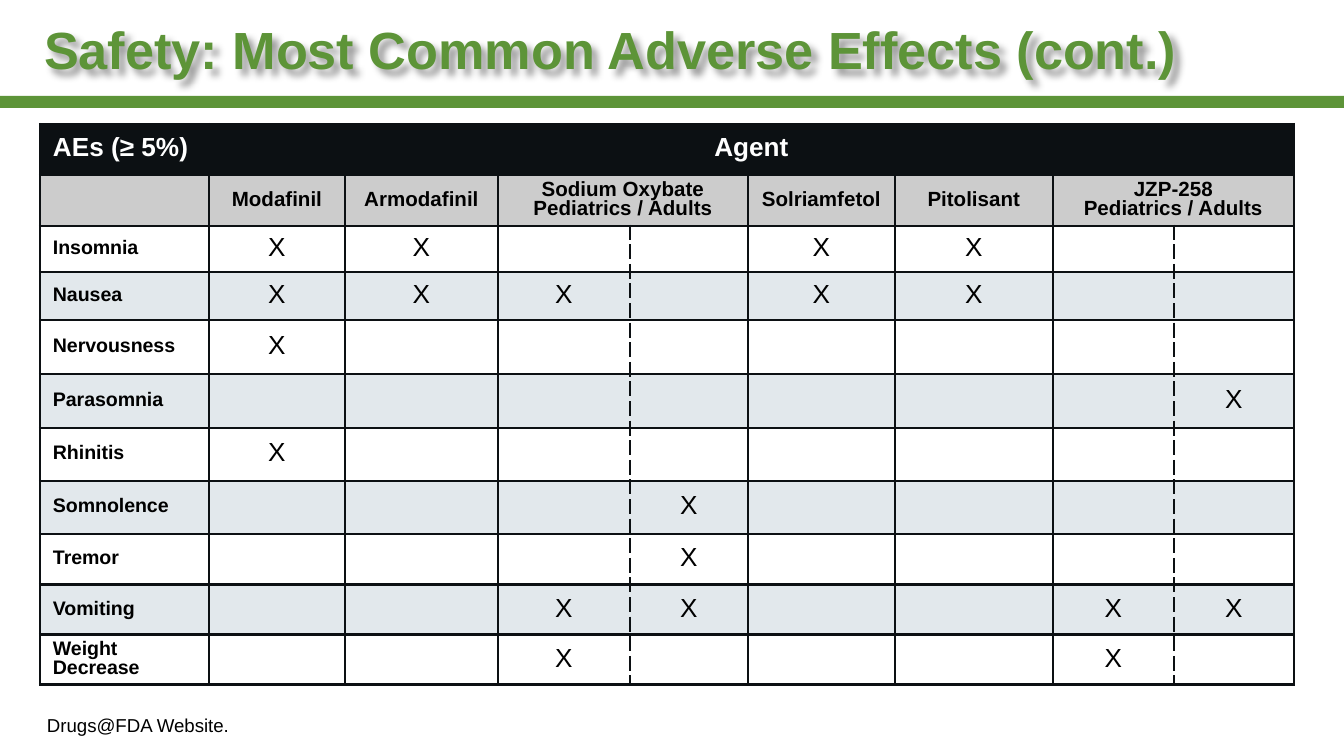
from lxml.etree import SubElement
from pptx import Presentation
from pptx.dml.color import RGBColor
from pptx.enum.shapes import MSO_SHAPE
from pptx.enum.text import MSO_ANCHOR, MSO_AUTO_SIZE, PP_ALIGN
from pptx.oxml.ns import qn
from pptx.util import Emu, Pt

PX = 914400 / 134.4
FONT = "Arial"
COLORS = {
    "green": "5D9438",
    "ink": "0C1013",
    "gray": "CCCCCC",
    "band": "E2E8EC",
    "white": "FFFFFF",
    "black": "000000",
}
COLUMN_WIDTHS = [169, 136, 153, 132, 118, 147, 158, 121, 120]
ROW_HEIGHTS = [51, 51, 46, 48, 54, 54, 53, 53, 51, 50, 50]
AGENTS = [
    (1, 1, "Modafinil"),
    (2, 2, "Armodafinil"),
    (3, 4, "Sodium Oxybate\nPediatrics / Adults"),
    (5, 5, "Solriamfetol"),
    (6, 6, "Pitolisant"),
    (7, 8, "JZP-258\nPediatrics / Adults"),
]
EFFECTS = [
    ("Insomnia", "XX--XX--"),
    ("Nausea", "XXX-XX--"),
    ("Nervousness", "X-------"),
    ("Parasomnia", "-------X"),
    ("Rhinitis", "X-------"),
    ("Somnolence", "---X----"),
    ("Tremor", "---X----"),
    ("Vomiting", "--XX--XX"),
    ("Weight Decrease", "--X---X-"),
]


def px(length):
    return Emu(round(length * PX))


def color(name):
    return RGBColor.from_string(COLORS[name])


def place(shape, left, top, width, height):
    shape.left, shape.top = px(left), px(top)
    shape.width, shape.height = px(width), px(height)


def set_text(frame, text, size, color_name, bold=False, align=PP_ALIGN.LEFT):
    para = frame.paragraphs[0]
    para.text = text
    para.alignment = align
    para.line_spacing = 0.85
    para.space_before = Pt(0)
    for span in para.runs:
        span.font.name = FONT
        span.font.size = Pt(size)
        span.font.bold = bold
        span.font.color.rgb = color(color_name)
    return para


def set_frame(frame, anchor, left, top, right, bottom):
    frame.word_wrap = True
    frame.auto_size = MSO_AUTO_SIZE.NONE
    frame.vertical_anchor = anchor
    frame.margin_left, frame.margin_top = px(left), px(top)
    frame.margin_right, frame.margin_bottom = px(right), px(bottom)


def add_title(page):
    title = page.shapes.title
    place(title, 44, 20, 1253, 67)
    set_frame(title.text_frame, MSO_ANCHOR.MIDDLE, 0, 7, 0, 7)
    set_text(title.text_frame, "Safety: Most Common Adverse Effects (cont.)", 28, "green", True)
    title.fill.background()
    effects = SubElement(title.element.spPr, qn("a:effectLst"))
    shadow = SubElement(effects, qn("a:outerShdw"), blurRad="50800", dist="50800", dir="2700000")
    tint = SubElement(shadow, qn("a:srgbClr"), val=COLORS["black"])
    SubElement(tint, qn("a:alpha"), val="40000")


def add_source_line(page):
    box = page.placeholders[1]
    place(box, 0, 716, 1344, 40)
    set_frame(box.text_frame, MSO_ANCHOR.BOTTOM, 47, 0, 0, 20)
    para = set_text(box.text_frame, "Drugs@FDA Website.", 10, "black")
    properties = para._p.get_or_add_pPr()
    properties.set("marL", "0")
    properties.set("indent", "0")
    SubElement(properties, qn("a:buNone"))


def add_bar(page):
    bar = page.shapes.add_shape(MSO_SHAPE.RECTANGLE, 0, px(96), px(1344), px(12))
    bar.shadow.inherit = False
    bar.fill.solid()
    bar.fill.fore_color.rgb = color("green")
    bar.line.fill.background()


def set_borders(cell, dashed_side):
    properties = cell._tc.get_or_add_tcPr()
    for side in ("L", "R", "T", "B"):
        line = SubElement(properties, qn(f"a:ln{side}"), w=str(Pt(1.5)))
        paint = SubElement(line, qn("a:solidFill"))
        SubElement(paint, qn("a:srgbClr"), val=COLORS["ink"])
        SubElement(line, qn("a:prstDash"), val="sysDash" if side == dashed_side else "solid")


def style_cell(cell, fill_name, dashed_side=None):
    set_borders(cell, dashed_side)
    cell.fill.solid()
    cell.fill.fore_color.rgb = color(fill_name)
    cell.vertical_anchor = MSO_ANCHOR.MIDDLE
    cell.margin_left = cell.margin_right = px(13)
    cell.margin_top = cell.margin_bottom = px(6)
    SubElement(cell.text_frame.paragraphs[0]._p, qn("a:endParaRPr"), sz="1100")


def fill_headers(table):
    for column in range(len(COLUMN_WIDTHS)):
        style_cell(table.cell(0, column), "ink")
        style_cell(table.cell(1, column), "gray")
    table.cell(0, 1).merge(table.cell(0, 8))
    set_text(table.cell(0, 0).text_frame, "AEs (≥ 5%)", 14, "white", True)
    set_text(table.cell(0, 1).text_frame, "Agent", 14, "white", True, PP_ALIGN.CENTER)
    for first, last, agent in AGENTS:
        cell = table.cell(1, first)
        if last > first:
            cell.merge(table.cell(1, last))
        set_text(cell.text_frame, agent, 11, "black", True, PP_ALIGN.CENTER)


def fill_effects(table):
    dashed_sides = {3: "R", 4: "L", 7: "R", 8: "L"}
    for row, (effect, marks) in enumerate(EFFECTS, start=2):
        fill_name = "band" if row % 2 else "white"
        style_cell(table.cell(row, 0), fill_name)
        set_text(table.cell(row, 0).text_frame, effect, 10.5, "black", True)
        for column, mark in enumerate(marks, start=1):
            cell = table.cell(row, column)
            style_cell(cell, fill_name, dashed_sides.get(column))
            if mark == "X":
                set_text(cell.text_frame, mark, 14, "black", align=PP_ALIGN.CENTER)


def add_effects_table(page):
    frame = page.shapes.add_table(
        len(ROW_HEIGHTS), len(COLUMN_WIDTHS),
        px(40), px(124), px(sum(COLUMN_WIDTHS)), px(sum(ROW_HEIGHTS)),
    )
    table = frame.table
    table.first_row = table.horz_banding = False
    for column, width in zip(table.columns, COLUMN_WIDTHS):
        column.width = px(width)
    for row, height in zip(table.rows, ROW_HEIGHTS):
        row.height = px(height)
    fill_headers(table)
    fill_effects(table)


def main():
    deck = Presentation()
    deck.slide_width, deck.slide_height = px(1344), px(756)
    page = deck.slides.add_slide(deck.slide_layouts[1])
    add_bar(page)
    add_source_line(page)
    add_effects_table(page)
    add_title(page)
    deck.save("out.pptx")


if __name__ == "__main__":
    main()
